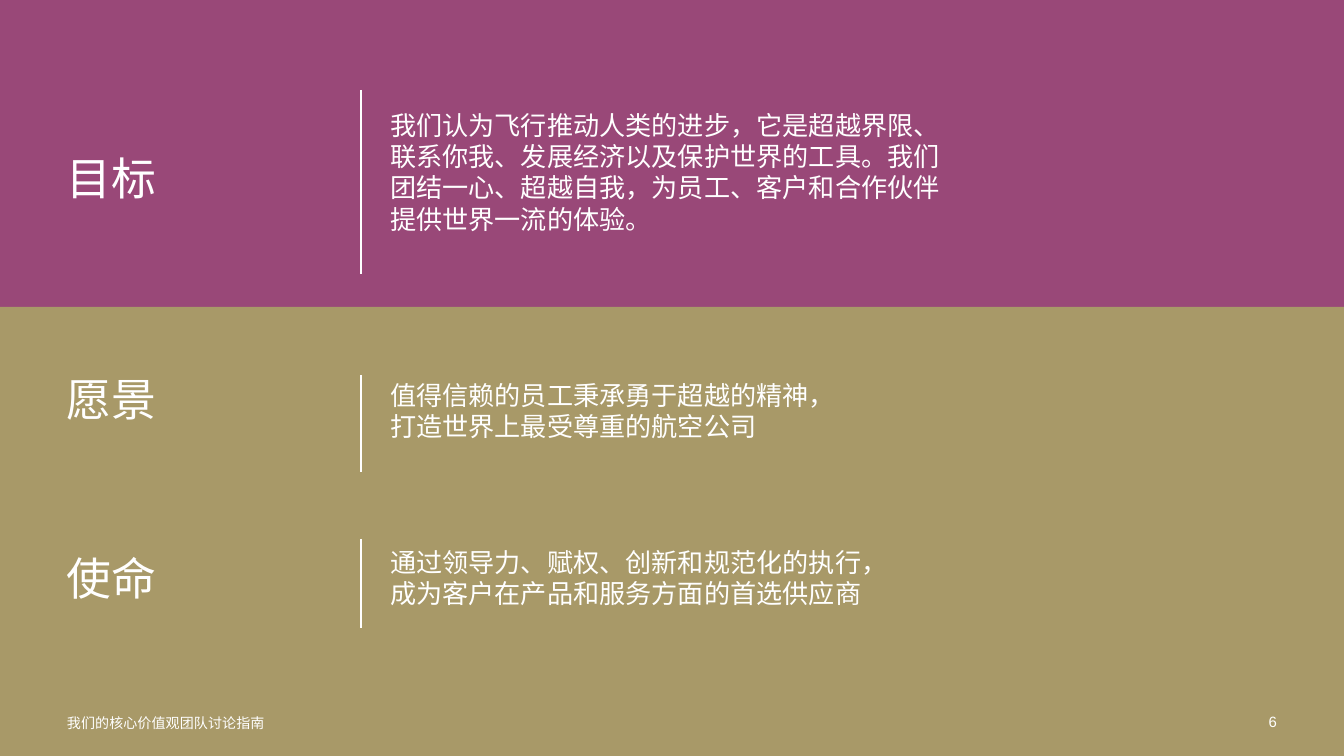
"""Builds the purpose, vision and mission slide."""
from dataclasses import dataclass

from lxml.etree import SubElement
from pptx import Presentation
from pptx.dml.color import RGBColor
from pptx.enum.shapes import MSO_CONNECTOR, MSO_SHAPE
from pptx.enum.text import MSO_ANCHOR, MSO_AUTO_SIZE, PP_ALIGN
from pptx.oxml.ns import qn
from pptx.util import Emu, Pt

PAGE_WIDTH, PAGE_HEIGHT = 1344, 756
BAND_TOP = 307
MARGIN = 67
RULE_X = 361
STATEMENT_X = 390
FOOTER_TOP, FOOTER_HEIGHT = 712, 27


@dataclass(frozen=True)
class Theme:
    """Colours, fonts and type sizes of the deck."""

    purple: RGBColor = RGBColor(0x99, 0x48, 0x78)
    gold: RGBColor = RGBColor(0xA8, 0x99, 0x68)
    white: RGBColor = RGBColor(0xFF, 0xFF, 0xFF)
    narrow: str = "Arial Narrow"
    regular: str = "Arial"
    heading: float = 24
    statement: float = 14
    footer: float = 7.5
    number: float = 8
    rule: float = 1


@dataclass(frozen=True)
class Section:
    """A heading, its statement and the rule between them."""

    heading: str
    statement: str
    heading_span: tuple
    rule_span: tuple
    statement_top: int
    statement_size: tuple


SECTIONS = [
    Section(
        "目标",
        "我们认为飞行推动人类的进步，它是超越界限、联系你我、发展经济以及保护世界的工具。"
        "我们团结一心、超越自我，为员工、客户和合作伙伴提供世界一流的体验。",
        (87, 187), (90, 274), 109, (566, 142),
    ),
    Section(
        "愿景",
        "值得信赖的员工秉承勇于超越的精神，打造世界上最受尊重的航空公司",
        (372, 60), (375, 472), 379, (464, 87),
    ),
    Section(
        "使命",
        "通过领导力、赋权、创新和规范化的执行，成为客户在产品和服务方面的首选供应商",
        (536, 91), (539, 628), 546, (513, 110),
    ),
]


def px(length):
    """Turn pixels into EMU."""
    return Emu(round(length * 9144000 / PAGE_WIDTH))


class Page:
    """Draws themed elements on one slide."""

    def __init__(self, slide, theme):
        """Keep the slide and theme, and paint the background."""
        self.slide = slide
        self.theme = theme
        fill = slide.background.fill
        fill.solid()
        fill.fore_color.rgb = theme.purple

    def band(self, left, top, width, height):
        """Add a plain gold rectangle."""
        shape = self.slide.shapes.add_shape(
            MSO_SHAPE.RECTANGLE, px(left), px(top), px(width), px(height))
        shape.shadow.inherit = False
        shape.fill.solid()
        shape.fill.fore_color.rgb = self.theme.gold
        shape.line.fill.background()

    def rule(self, left, top, bottom):
        """Add a thin vertical line."""
        line = self.slide.shapes.add_connector(
            MSO_CONNECTOR.STRAIGHT, px(left), px(top), px(left), px(bottom))
        line.line.color.rgb = self.theme.white
        line.line.width = Pt(self.theme.rule)
        SubElement(line._element.spPr, qn("a:effectLst"))

    def text(self, words, left, top, width, height, font, size, box=None,
             anchor=MSO_ANCHOR.TOP, align=PP_ALIGN.LEFT, wrap=True, inset=0):
        """Write one paragraph in a placeholder or a new text box."""
        if box is None:
            box = self.slide.shapes.add_textbox(0, 0, 0, 0)
        box.left, box.top, box.width, box.height = map(
            px, (left, top, width, height))
        frame = box.text_frame
        frame.auto_size = MSO_AUTO_SIZE.NONE
        frame.word_wrap = wrap
        frame.vertical_anchor = anchor
        frame.margin_left = frame.margin_right = frame.margin_bottom = 0
        frame.margin_top = px(inset)
        frame.text = words
        para = frame.paragraphs[0]
        para.alignment = align
        para.space_before = Pt(0)
        para.font.name = font
        para.font.size = Pt(size)
        para.font.color.rgb = self.theme.white
        return para

    def heading(self, words, top, height, box=None):
        """Add a section heading."""
        para = self.text(
            words, MARGIN, top, RULE_X - MARGIN, height, self.theme.narrow,
            self.theme.heading, box, anchor=MSO_ANCHOR.MIDDLE)
        para.line_spacing = 0.9

    def statement(self, words, top, width, height, box=None):
        """Add a section statement without a bullet."""
        para = self.text(
            words, STATEMENT_X, top, width, height, self.theme.regular,
            self.theme.statement, box)
        para.space_after = Pt(8)
        properties = para._p.get_or_add_pPr()
        properties.set("marL", "0")
        properties.set("indent", "0")
        bullet = properties.makeelement(qn("a:buNone"), {})
        properties.insert_element_before(bullet, "a:tabLst", "a:defRPr")

    def section(self, section, title=None, body=None):
        """Add a heading, a rule and a statement."""
        self.statement(section.statement, section.statement_top,
                       *section.statement_size, body)
        self.heading(section.heading, *section.heading_span, title)
        self.rule(RULE_X, *section.rule_span)

    def footer(self, words, number):
        """Add the guide name and the page number."""
        self.text(words, MARGIN, FOOTER_TOP, 585, FOOTER_HEIGHT,
                  self.theme.narrow, self.theme.footer, wrap=False, inset=3)
        self.text(number, PAGE_WIDTH - 2 * MARGIN, FOOTER_TOP, MARGIN,
                  FOOTER_HEIGHT, self.theme.regular, self.theme.number,
                  align=PP_ALIGN.RIGHT, wrap=False, inset=1)


def main():
    """Build and save the deck."""
    deck = Presentation()
    deck.slide_width, deck.slide_height = px(PAGE_WIDTH), px(PAGE_HEIGHT)
    slide = deck.slides.add_slide(deck.slide_layouts[1])
    page = Page(slide, Theme())
    page.band(0, BAND_TOP, PAGE_WIDTH, PAGE_HEIGHT - BAND_TOP)
    page.footer("我们的核心价值观团队讨论指南", "6")
    purpose, *others = SECTIONS
    page.section(purpose, slide.shapes.title, slide.placeholders[1])
    for section in others:
        page.section(section)
    deck.save("out.pptx")


if __name__ == "__main__":
    main()
